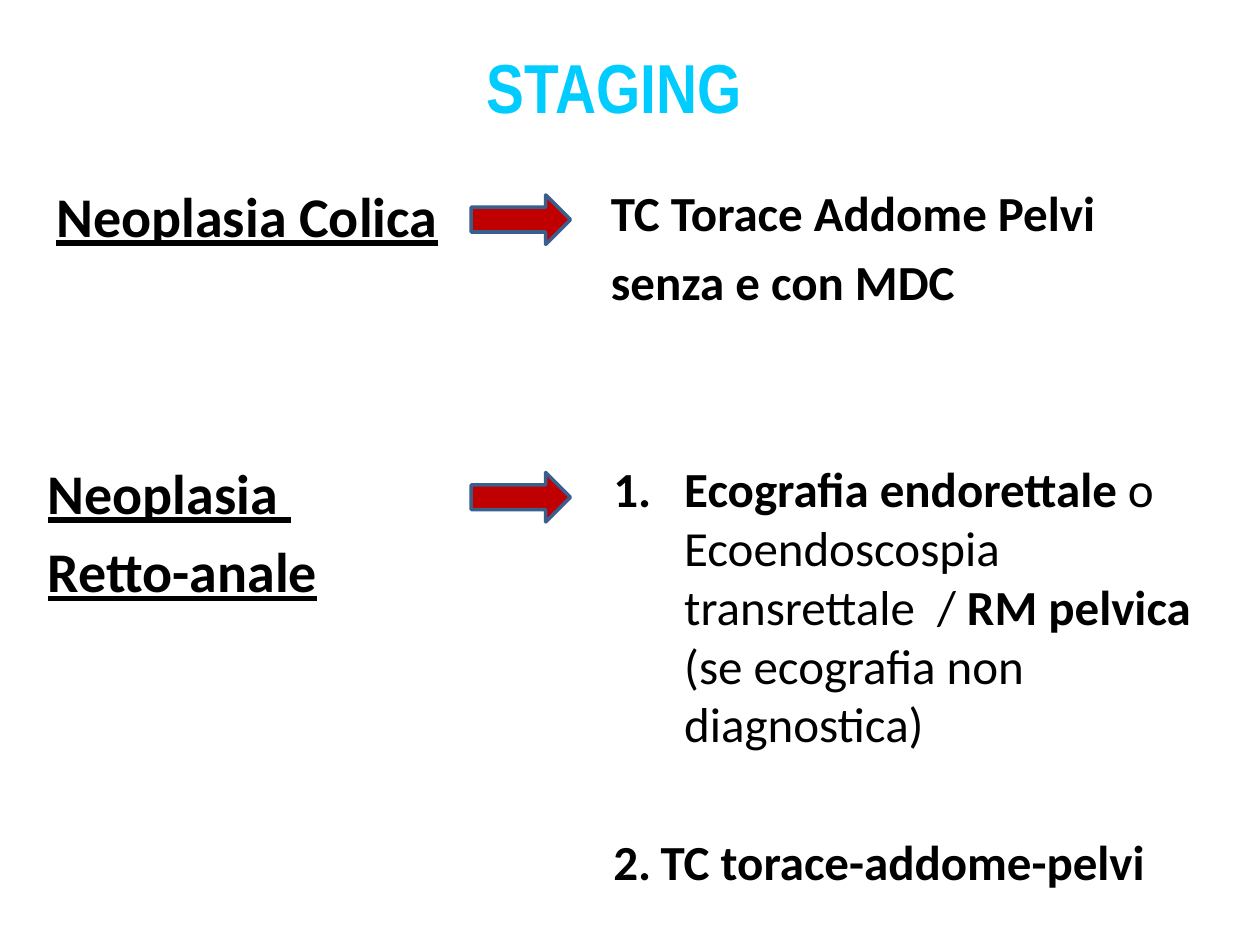
from pptx import Presentation
from pptx.util import Pt
from pptx.dml.color import RGBColor
from pptx.enum.shapes import MSO_SHAPE
from pptx.enum.text import MSO_ANCHOR, PP_ALIGN
from lxml.etree import SubElement
from pptx.oxml.ns import qn

COLORS = {"title": "00CCFF", "text": "000000", "arrow": "C00000", "edge": "3A5F8C"}

deck = Presentation()
deck.slide_width, deck.slide_height = Pt(720), Pt(540)
slide = deck.slides.add_slide(deck.slide_layouts[6])


def add_box(left, top, width, height, lines, size, gap=0, face="Calibri", color="text"):
    """Add a text box; each line is a list of (words, bold) runs."""
    frame = slide.shapes.add_textbox(Pt(left), Pt(top), Pt(width), Pt(height)).text_frame
    frame.word_wrap = True
    for i, line in enumerate(lines):
        para = frame.paragraphs[0] if i == 0 else frame.add_paragraph()
        if i:
            para.space_before = Pt(gap)
        for words, bold in line:
            run = para.add_run()
            run.text = words
            font = run.font
            font.name, font.size, font.bold = face, Pt(size), bold
            font.color.rgb = RGBColor.from_string(COLORS[color])
    return frame


def add_number(para, start, indent):
    """Number a paragraph with a hanging indent."""
    props = para._p.get_or_add_pPr()
    props.set("marL", str(Pt(indent)))
    props.set("indent", str(-Pt(indent)))
    SubElement(props, qn("a:buFont"), typeface="+mj-lt")
    SubElement(props, qn("a:buAutoNum"), type="arabicPeriod", startAt=str(start))


# Title
title = add_box(36, 21.6, 630, 55.4, [[("STAGING", True)]], 39.6,
                face="Arial Narrow", color="title")
title.vertical_anchor = MSO_ANCHOR.MIDDLE
title.paragraphs[0].alignment = PP_ALIGN.CENTER

# Tumour sites on the left
colon = add_box(25.2, 100, 238, 73.4, [[("Neoplasia Colica", True)]], 32)
rectum = add_box(20.2, 258.5, 238, 100,
                 [[("Neoplasia ", True)], [("Retto-anale", True)]], 32, 6.4)
for frame in (colon, rectum):
    for para in frame.paragraphs:
        para.runs[0].font.underline = True

# Exams on the right
add_box(342, 100.8, 360, 86,
        [[("TC Torace Addome Pelvi", True)], [("senza e con MDC", True)]], 28, 5.6)
exams = add_box(343.4, 258.5, 353, 270, [
    [("Ecografia endorettale ", True),
     ("o Ecoendoscospia transrettale  / ", False),
     ("RM pelvica ", True),
     ("(se ecografia non diagnostica)", False)],
    [("TC torace-addome-pelvi", True)],
], 28, 45)
for start, (para, indent) in enumerate(zip(exams.paragraphs, (40.5, 27)), 1):
    add_number(para, start, indent)

# Arrows from site to exam
for top in (111.4, 270):
    arrow = slide.shapes.add_shape(MSO_SHAPE.RIGHT_ARROW, Pt(269.3), Pt(top), Pt(56.7), Pt(28.3))
    arrow.shadow.inherit = False
    arrow.fill.solid()
    arrow.fill.fore_color.rgb = RGBColor.from_string(COLORS["arrow"])
    arrow.line.color.rgb = RGBColor.from_string(COLORS["edge"])
    arrow.line.width = Pt(2)

deck.save("out.pptx")
